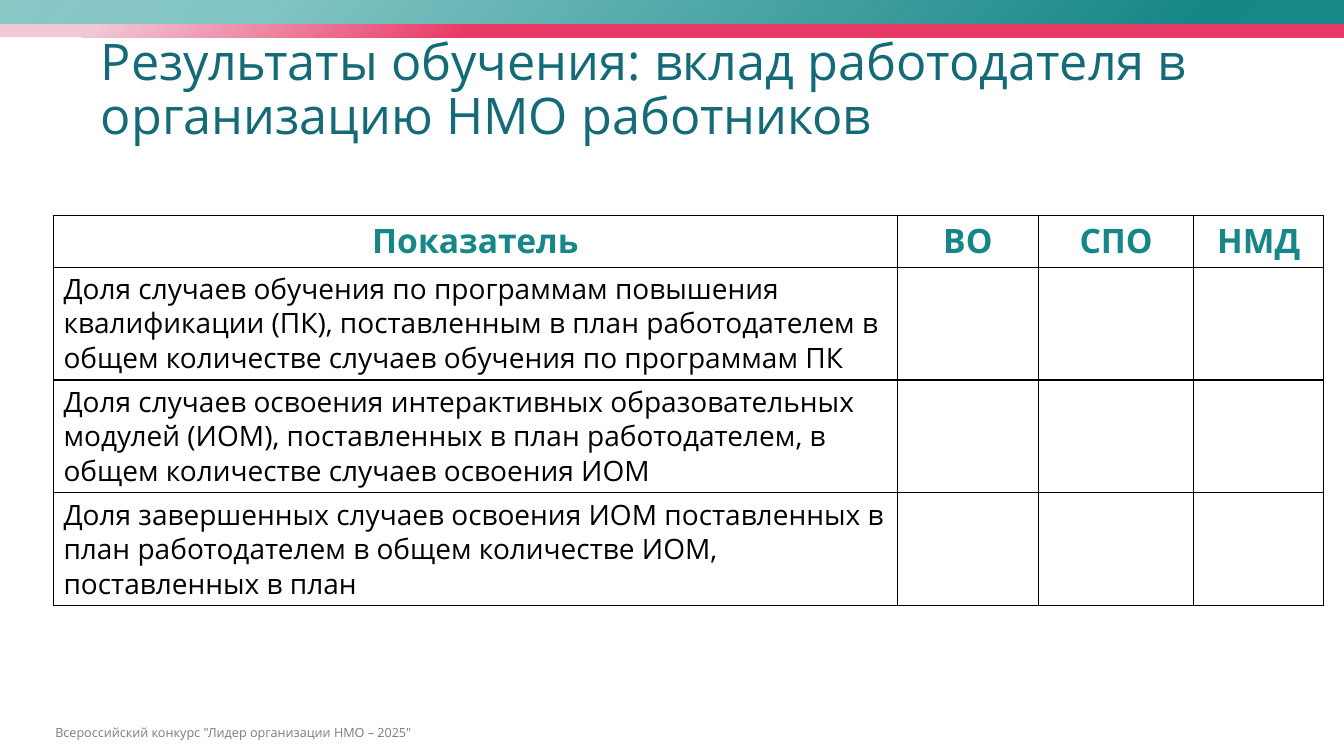
from lxml.etree import SubElement
from pptx import Presentation
from pptx.dml.color import RGBColor
from pptx.enum.shapes import MSO_SHAPE
from pptx.enum.text import MSO_ANCHOR, MSO_AUTO_SIZE, PP_ALIGN
from pptx.oxml import parse_xml
from pptx.oxml.ns import nsdecls, qn
from pptx.util import Inches, Pt

FONT = "Open Sans"
COLORS = {
    "title": "146A76",
    "header": "168686",
    "body": "000000",
    "border": "000000",
    "footer": "7C7C7C",
}
TEAL_STOPS = [(0, "198888", 100), (11, "168686", 100), (80, "83C5C5", 100), (100, "83C5C5", 93)]
PINK_STOPS = [(65, "E83A66", 100), (93, "F1C8D6", 100), (100, "F1C8D6", 100)]

HEADERS = ["Показатель", "ВО", "СПО", "НМД"]
INDICATORS = [
    "Доля случаев обучения по программам повышения квалификации (ПК), поставленным в план "
    "работодателем в общем количестве случаев обучения по программам ПК",
    "Доля случаев освоения интерактивных образовательных модулей (ИОМ), поставленных в план "
    "работодателем, в общем количестве случаев освоения ИОМ",
    "Доля завершенных случаев освоения ИОМ поставленных в план работодателем в общем "
    "количестве ИОМ, поставленных в план",
]
COLUMN_WIDTHS = [8.37, 1.4, 1.54, 1.29]
HEADER_HEIGHT = 0.51
ROW_HEIGHT = 1.12


def write_text(frame, text, size, color, bold=False, align=PP_ALIGN.LEFT, spacing=0.9):
    frame.text = text
    para = frame.paragraphs[0]
    para.alignment = align
    para.line_spacing = spacing
    span = para.runs[0]
    span.font.name = FONT
    span.font.size = Pt(size)
    span.font.bold = bold
    span.font.color.rgb = RGBColor.from_string(COLORS[color])


def add_band(page, box, stops):
    band = page.shapes.add_shape(MSO_SHAPE.RECTANGLE, *map(Inches, box))
    stop_xml = "".join(
        f'<a:gs pos="{position * 1000}"><a:srgbClr val="{color}">'
        f'<a:alpha val="{alpha * 1000}"/></a:srgbClr></a:gs>'
        for position, color, alpha in stops
    )
    band._element.spPr.append(parse_xml(
        f'<a:gradFill {nsdecls("a")} rotWithShape="1"><a:gsLst>{stop_xml}</a:gsLst>'
        '<a:path path="circle"><a:fillToRect l="100000" t="100000"/></a:path></a:gradFill>'
    ))
    band.line.fill.background()
    band.shadow.inherit = False


def add_title(page, box, text):
    title = page.shapes.title
    title.left, title.top, title.width, title.height = map(Inches, box)
    frame = title.text_frame
    frame.word_wrap = True
    frame.auto_size = MSO_AUTO_SIZE.NONE
    frame.vertical_anchor = MSO_ANCHOR.MIDDLE
    write_text(frame, text, 36, "title")


def add_footer(page, box, text):
    frame = page.shapes.add_textbox(*map(Inches, box)).text_frame
    frame.word_wrap = True
    write_text(frame, text, 9, "footer", spacing=1.0)


def style_cell(cell):
    cell.vertical_anchor = MSO_ANCHOR.MIDDLE
    properties = cell._tc.get_or_add_tcPr()
    for side in ("a:lnL", "a:lnR", "a:lnT", "a:lnB"):
        line = SubElement(properties, qn(side), w=str(Pt(1)))
        fill = SubElement(line, qn("a:solidFill"))
        SubElement(fill, qn("a:srgbClr"), val=COLORS["border"])
    cell.fill.background()


def add_indicator_table(page, box):
    frame = page.shapes.add_table(len(INDICATORS) + 1, len(HEADERS), *map(Inches, box))
    table = frame.table
    for column, width in zip(table.columns, COLUMN_WIDTHS):
        column.width = Inches(width)
    for index, row in enumerate(table.rows):
        row.height = Inches(ROW_HEIGHT if index else HEADER_HEIGHT)
    for cell in table.iter_cells():
        style_cell(cell)
    for index, header in enumerate(HEADERS):
        write_text(table.cell(0, index).text_frame, header, 24, "header", True, PP_ALIGN.CENTER)
    for index, indicator in enumerate(INDICATORS, start=1):
        write_text(table.cell(index, 0).text_frame, indicator, 20, "body")


def main():
    deck = Presentation()
    deck.slide_width = Inches(13.33)
    deck.slide_height = Inches(7.5)
    page = deck.slides.add_slide(deck.slide_layouts[5])
    add_footer(page, (0.45, 7.14, 12.83, 0.25), 'Всероссийский конкурс "Лидер организации НМО – 2025"')
    add_title(page, (0.9, 0.18, 11.5, 1.45),
              "Результаты обучения: вклад работодателя в организацию НМО работников")
    table_height = HEADER_HEIGHT + ROW_HEIGHT * len(INDICATORS)
    add_indicator_table(page, (0.53, 2.14, sum(COLUMN_WIDTHS), table_height))
    add_band(page, (0, -0.02, 13.33, 0.26), TEAL_STOPS)
    add_band(page, (0, 0.24, 13.33, 0.13), PINK_STOPS)
    deck.save("out.pptx")


if __name__ == "__main__":
    main()
